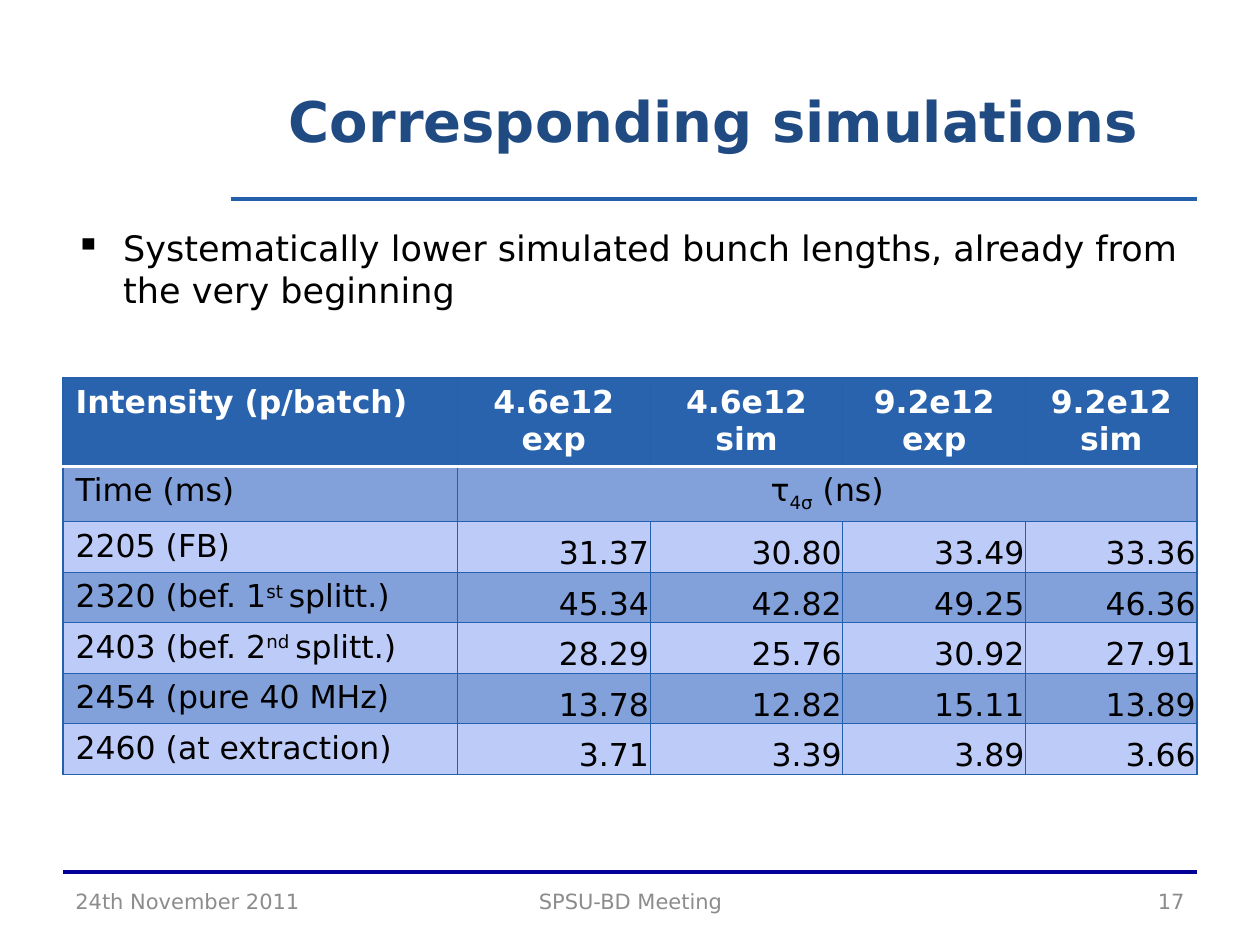
"""Build the slide that compares measured and simulated bunch lengths."""
from dataclasses import dataclass
from typing import Any

from lxml import etree
from pptx import Presentation
from pptx import util as u
from pptx.dml.color import RGBColor
from pptx.enum import shapes, text
from pptx.oxml.ns import qn

WIDE, TALL = u.Inches(10), u.Inches(7.5)
LEFT, MID, RIGHT = text.PP_ALIGN.LEFT, text.PP_ALIGN.CENTER, text.PP_ALIGN.RIGHT


@dataclass(frozen=True)
class Theme:
    """Colours, font and type sizes."""
    font: str = "DejaVu Sans"
    title: str = "1F4A82"
    rule: str = "2560AC"
    base: str = "000099"
    head: str = "2963AD"
    dark: str = "82A1DB"
    light: str = "BDCBF9"
    ink: str = "000000"
    white: str = "FFFFFF"
    grey: str = "8C8C8C"
    big: int = 32
    body: int = 20
    cell: int = 18
    small: int = 12


@dataclass(frozen=True)
class Area:
    """A box in percent of the slide's width and height."""
    x: float
    y: float
    w: float
    h: float = 0

    def emu(self) -> tuple[int, ...]:
        """Give left, top, width and height as lengths."""
        pairs = ((self.x, WIDE), (self.y, TALL), (self.w, WIDE), (self.h, TALL))
        return tuple(round(part * full / 100) for part, full in pairs)


@dataclass(frozen=True)
class Look:
    """Size, colour, weight and alignment of a text."""
    size: int
    color: str
    bold: bool = False
    align: Any = LEFT


@dataclass(frozen=True)
class Note:
    """A footer text and its place."""
    words: str
    area: Area
    align: Any


T = Theme()
RULES = ((Area(18.3, 21.07, 76.7), T.rule), (Area(5, 92.27, 90), T.base))
NOTES = (
    Note("24th November 2011", Area(5, 92.67, 23.3, 5.33), LEFT),
    Note("SPSU-BD Meeting", Area(34.2, 92.67, 31.7, 5.33), MID),
    Note("17", Area(71.7, 92.67, 23.3, 5.33), RIGHT),
)
COLS = (3.13, 1.53, 1.53, 1.45, 1.36)
ROWS = (0.68, 0.43) + (0.39,) * 5
DATA = (
    ("Intensity (p/batch)", "4.6e12\nexp", "4.6e12\nsim", "9.2e12\nexp", "9.2e12\nsim"),
    ("Time (ms)", "τ|4σ| (ns)"),
    ("2205 (FB)", "31.37", "30.80", "33.49", "33.36"),
    ("2320 (bef. 1|st |splitt.)", "45.34", "42.82", "49.25", "46.36"),
    ("2403 (bef. 2|nd |splitt.)", "28.29", "25.76", "30.92", "27.91"),
    ("2454 (pure 40 MHz)", "13.78", "12.82", "15.11", "13.89"),
    ("2460 (at extraction)", "3.71", "3.39", "3.89", "3.66"),
)


def assign(item: Any, **values: Any) -> None:
    """Set attributes from format values."""
    for key, value in values.items():
        setattr(item, key, value)


def write(frame: Any, words: str, look: Look, shift: int = 0) -> None:
    """Write lines whose parts between bars are shifted off the baseline."""
    for row, line in enumerate(words.split("\n")):
        para = frame.add_paragraph() if row else frame.paragraphs[0]
        para.alignment = look.align
        for step, part in enumerate(line.split("|")):
            run = para.add_run()
            run.text = part
            assign(run.font, name=T.font, size=u.Pt(look.size), bold=look.bold)
            run.font.color.rgb = RGBColor.from_string(look.color)
            if step % 2:
                run.font._element.set("baseline", str(shift * 1000))


def box(slide: Any, area: Area, words: str, look: Look, anchor: Any) -> Any:
    """Add a wrapped text box."""
    frame = slide.shapes.add_textbox(*area.emu()).text_frame
    assign(frame, word_wrap=True, vertical_anchor=anchor)
    write(frame, words, look)
    return frame


def rule(slide: Any, area: Area, color: str) -> None:
    """Add a level line."""
    x, y, w, _ = area.emu()
    line = slide.shapes.add_connector(shapes.MSO_CONNECTOR.STRAIGHT, x, y, x + w, y)
    line.line.width = u.Pt(2)
    line.line.color.rgb = RGBColor.from_string(color)
    etree.SubElement(line._element.spPr, qn("a:effectLst"))


def edge(cell: Any, side: str, color: str, width: float) -> None:
    """Draw one border of a cell."""
    line = etree.SubElement(cell._tc.get_or_add_tcPr(), qn(f"a:ln{side}"), w=str(u.Pt(width)))
    fill = etree.SubElement(line, qn("a:solidFill"))
    etree.SubElement(fill, qn("a:srgbClr"), val=color)


def paint(cell: Any, row: int) -> None:
    """Give a cell its borders and fill."""
    white = {0: "B", 1: "T"}.get(row)
    for side in "LRTB":
        edge(cell, side, *((T.white, 2) if side == white else (T.rule, 0.75)))
    cell.fill.solid()
    shade = T.head if row == 0 else T.dark if row % 2 else T.light
    cell.fill.fore_color.rgb = RGBColor.from_string(shade)


def grid(slide: Any, area: Area) -> None:
    """Add the table of bunch lengths."""
    table = slide.shapes.add_table(len(ROWS), len(COLS), *area.emu()).table
    assign(table, first_row=False, horz_banding=False)
    for col, width in zip(table.columns, COLS):
        col.width = u.Inches(width)
    for row, height in zip(table.rows, ROWS):
        row.height = u.Inches(height)
    for r in range(len(ROWS)):
        for c in range(len(COLS)):
            paint(table.cell(r, c), r)
    table.cell(1, 1).merge(table.cell(1, len(COLS) - 1))
    tight = u.Inches(0.01)
    for r, line in enumerate(DATA):
        for c, words in enumerate(line):
            cell = table.cell(r, c)
            align = LEFT if c == 0 else MID if r < 2 else RIGHT
            look = Look(T.cell, T.ink if r else T.white, r == 0, align)
            if align == RIGHT:
                assign(cell, vertical_anchor=text.MSO_ANCHOR.BOTTOM, margin_left=tight,
                       margin_right=tight, margin_top=tight, margin_bottom=0)
            write(cell.text_frame, words, look, -25 if r == 1 else 30)


def main() -> None:
    """Build and save the slide."""
    deck = Presentation()
    assign(deck, slide_width=WIDE, slide_height=TALL)
    slide = deck.slides.add_slide(deck.slide_layouts[5])
    for area, color in RULES:
        rule(slide, area, color)

    title = slide.shapes.title
    assign(title, **dict(zip(("left", "top", "width", "height"), Area(18.3, 4, 76.7, 16).emu())))
    title.text_frame.vertical_anchor = text.MSO_ANCHOR.MIDDLE
    write(title.text_frame, "Corresponding simulations", Look(T.big, T.title, True, MID))
    title.text_frame.paragraphs[0].line_spacing = u.Pt(46)

    words = "Systematically lower simulated bunch lengths, already from the very beginning"
    frame = box(slide, Area(5, 23.33, 90, 66), words, Look(T.body, T.ink), text.MSO_ANCHOR.TOP)
    props = frame.paragraphs[0]._p.get_or_add_pPr()
    for key, inset in {"marL": 0.38, "indent": -0.38}.items():
        props.set(key, str(u.Inches(inset)))
    etree.SubElement(props, qn("a:buChar"), char="▪")

    for note in NOTES:
        look = Look(T.small, T.grey, align=note.align)
        box(slide, note.area, note.words, look, text.MSO_ANCHOR.MIDDLE)
    grid(slide, Area(5, 40, 90, 40.8))
    deck.save("out.pptx")


if __name__ == "__main__":
    main()
